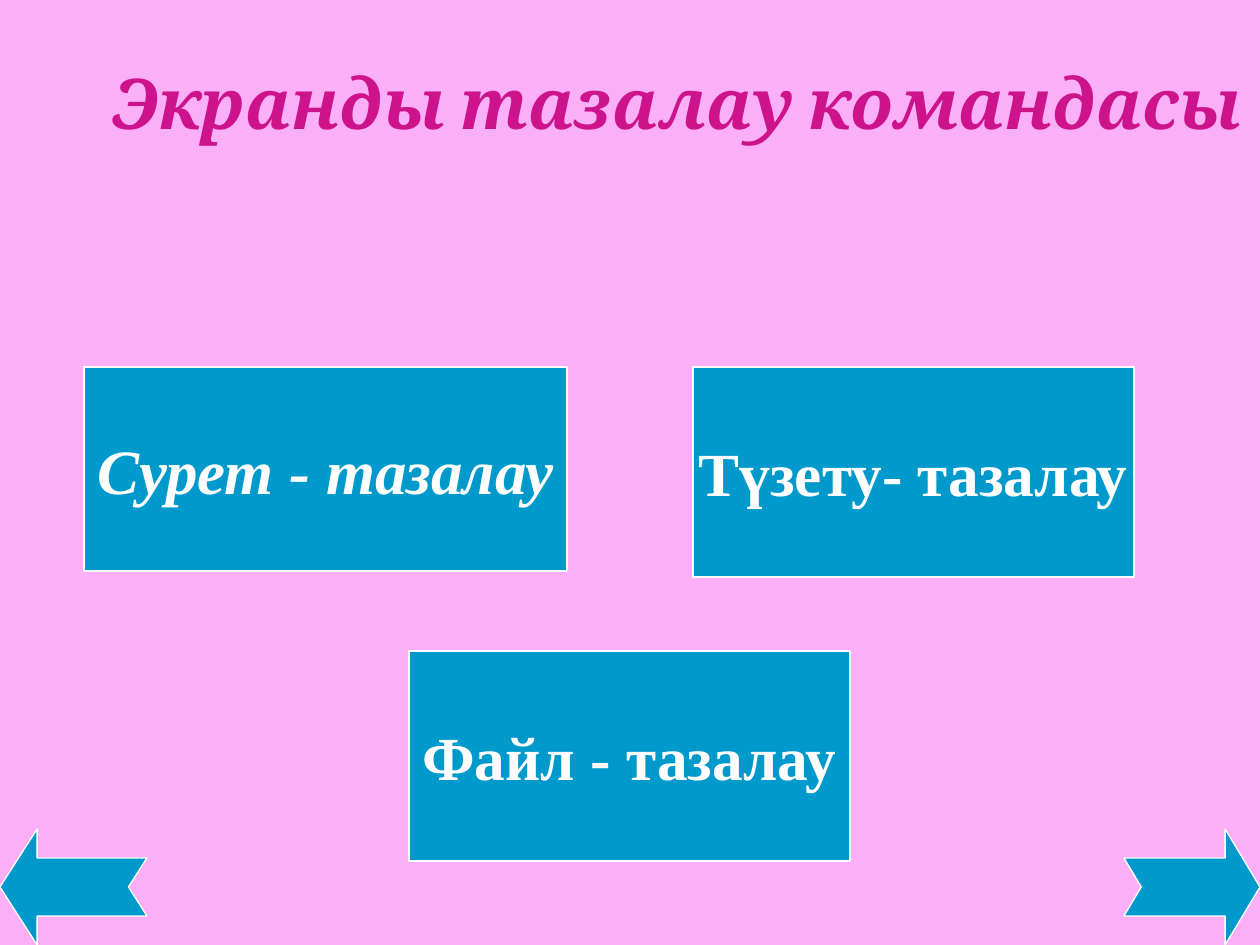
from pptx import Presentation
from pptx.dml.color import RGBColor
from pptx.enum.shapes import MSO_SHAPE as Preset
from pptx.enum.text import MSO_ANCHOR as Anchor, PP_ALIGN as Align
from pptx.util import Emu, Pt

PINK = RGBColor(0xFB, 0xAF, 0xF6)
MAGENTA = RGBColor(0xCD, 0x13, 0x8B)
BLUE = RGBColor(0x00, 0x99, 0xCC)
WHITE = RGBColor(0xFF, 0xFF, 0xFF)

WIDTH, HEIGHT = 1260, 945
EMU_PER_PX = 914400 / 126


def px(length):
    return Emu(round(length * EMU_PER_PX))


def write(frame, words, font, size, color, italic):
    paragraph = frame.paragraphs[0]
    paragraph.alignment = Align.CENTER
    run = paragraph.add_run()
    run.text = words
    run.font.name = font
    run.font.size = Pt(size)
    run.font.bold = True
    run.font.italic = italic
    run.font.color.rgb = color


def add_blue_shape(slide, preset, box):
    shape = slide.shapes.add_shape(preset, *map(px, box))
    shape.shadow.inherit = False
    shape.fill.solid()
    shape.fill.fore_color.rgb = BLUE
    shape.line.color.rgb = WHITE
    shape.line.width = Pt(0.75)
    return shape


def add_heading(slide, box, words):
    heading = slide.shapes.add_textbox(*map(px, box))
    heading.text_frame.word_wrap = True
    write(heading.text_frame, words, "Cambria", 40, MAGENTA, True)


def add_command(slide, box, words, size, italic=False):
    command = add_blue_shape(slide, Preset.RECTANGLE, box)
    frame = command.text_frame
    frame.word_wrap = False
    frame.vertical_anchor = Anchor.MIDDLE
    write(frame, words, "Times New Roman", size, WHITE, italic)


def add_page_arrow(slide, box, head, backward=False):
    arrow = add_blue_shape(slide, Preset.NOTCHED_RIGHT_ARROW, box)
    arrow.adjustments[0] = 0.5
    arrow.adjustments[1] = head
    if backward:
        arrow.element.spPr.xfrm.set("flipH", "1")


def add_navigation(slide, box):
    left, top, width, height = box
    next_width, back_width = 136, 147
    next_left = left + width - next_width
    add_page_arrow(slide, (next_left, top, next_width, height), 0.3)
    add_page_arrow(slide, (left, top, back_width, height), 0.32, backward=True)


def add_commands(slide, box):
    left, top, width, height = box
    card_width, card_height = 441, 210
    right = left + width - card_width
    bottom = top + height - card_height
    add_command(slide, (left, top, 483, 204), "Сурет - тазалау", 36, italic=True)
    add_command(slide, (right, top, card_width, card_height), "Түзету- тазалау", 35)
    middle = (WIDTH - card_width) // 2
    add_command(slide, (middle, bottom, card_width, card_height), "Файл - тазалау", 35)


def main():
    deck = Presentation()
    deck.slide_width, deck.slide_height = px(WIDTH), px(HEIGHT)
    slide = deck.slides.add_slide(deck.slide_layouts[6])
    slide.background.fill.solid()
    slide.background.fill.fore_color.rgb = PINK
    add_navigation(slide, (0, 829, WIDTH, 116))
    add_heading(slide, (94, 53, 1166, 850), "Экранды тазалау командасы")
    add_commands(slide, (84, 367, 1050, 494))
    deck.save("out.pptx")


if __name__ == "__main__":
    main()
